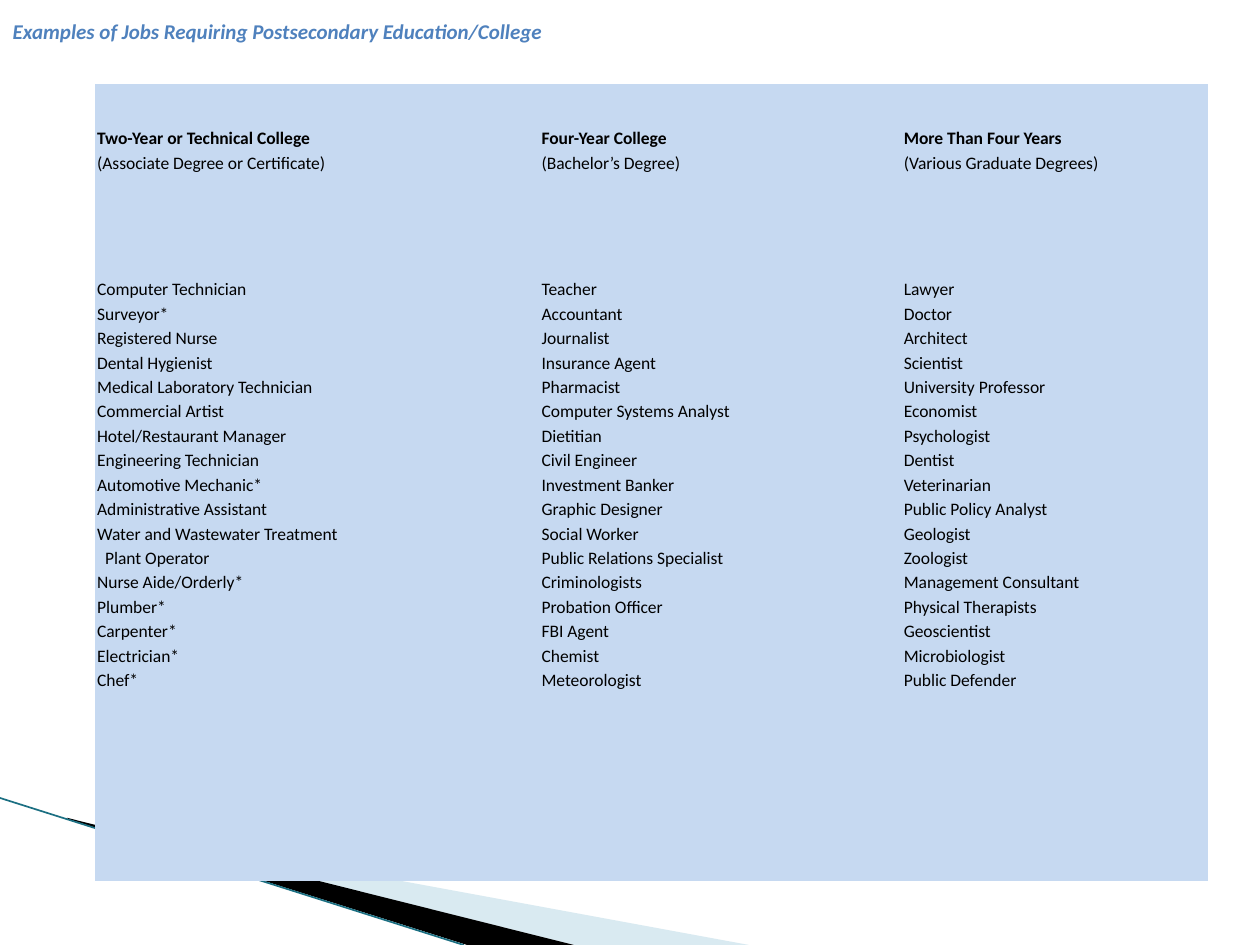
from dataclasses import dataclass

from lxml.etree import SubElement
from pptx import Presentation
from pptx.dml.color import RGBColor
from pptx.enum.shapes import MSO_CONNECTOR
from pptx.enum.text import MSO_ANCHOR, PP_ALIGN
from pptx.oxml.ns import qn
from pptx.util import Pt

PALE_TEAL = RGBColor(0xA0, 0xCB, 0xDC)
DARK_TEAL = RGBColor(0x1B, 0x6F, 0x82)
BLACK = RGBColor(0, 0, 0)
TITLE_BLUE = RGBColor(0x4F, 0x81, 0xBD)
CELL_BLUE = RGBColor(0xC6, 0xD9, 0xF1)
FONT = "Calibri"
PLAIN_TABLE = "{2D5ABB26-0587-4C30-8999-92F81FD0307C}"  # no style, no grid
ROW_HEIGHTS = (22.3, 64.1, 22.3, 347)
HEAD_ROW, JOBS_ROW = 1, 3


@dataclass
class Wedge:
    points: list[tuple[float, float]]
    color: RGBColor
    opacity: int = 100


@dataclass
class Column:
    width: float
    level: str
    degree: str
    jobs: list[str]


WEDGES = [
    Wedge([(39.6, 468.5), (428, 540), (328, 540), (39.6, 468)], PALE_TEAL, 40),
    Wedge([(38.2, 467.3), (328, 540), (267, 540), (38.9, 468)], BLACK),
]

CONTINUED = "Plant Operator"  # second line of the job above it
COLUMNS = [
    Column(254, "Two-Year or Technical College", "(Associate Degree or Certificate)", [
        "Computer Technician", "Surveyor*", "Registered Nurse", "Dental Hygienist",
        "Medical Laboratory Technician", "Commercial Artist",
        "Hotel/Restaurant Manager", "Engineering Technician",
        "Automotive Mechanic*", "Administrative Assistant",
        "Water and Wastewater Treatment", CONTINUED, "Nurse Aide/Orderly*",
        "Plumber*", "Carpenter*", "Electrician*", "Chef*"]),
    Column(207, "Four-Year College", "(Bachelor’s Degree)", [
        "Teacher", "Accountant", "Journalist", "Insurance Agent", "Pharmacist",
        "Computer Systems Analyst", "Dietitian", "Civil Engineer",
        "Investment Banker", "Graphic Designer", "Social Worker",
        "Public Relations Specialist", "Criminologists", "Probation Officer",
        "FBI Agent", "Chemist", "Meteorologist"]),
    Column(174.8, "More Than Four Years", "(Various Graduate Degrees)", [
        "Lawyer", "Doctor", "Architect", "Scientist", "University Professor",
        "Economist", "Psychologist", "Dentist", "Veterinarian",
        "Public Policy Analyst", "Geologist", "Zoologist",
        "Management Consultant", "Physical Therapists", "Geoscientist",
        "Microbiologist", "Public Defender"]),
]


def add_wedge(shapes, wedge: Wedge) -> None:
    start, *rest = [(Pt(x), Pt(y)) for x, y in wedge.points]
    builder = shapes.build_freeform(*start)
    builder.add_line_segments(rest)
    sp = builder.convert_to_shape()
    sp.shadow.inherit = False
    sp.fill.solid()
    sp.fill.fore_color.rgb = wedge.color
    sp.line.fill.background()
    if wedge.opacity < 100:
        color = sp._element.spPr.find(qn("a:solidFill"))[0]
        SubElement(color, qn("a:alpha")).set("val", str(wedge.opacity * 1000))


def add_edge(shapes) -> None:
    line = shapes.add_connector(MSO_CONNECTOR.STRAIGHT, Pt(0), Pt(456), Pt(265), Pt(540))
    line.line.color.rgb = DARK_TEAL
    line.line.width = Pt(0.95)
    SubElement(line._element.spPr, qn("a:effectLst"))


def fill_cell(cell, lines: list[str], bold_first: bool = False) -> None:
    cell.fill.solid()
    cell.fill.fore_color.rgb = CELL_BLUE
    cell.margin_left = cell.margin_right = Pt(1.2)
    cell.margin_top = cell.margin_bottom = Pt(1.2)
    tf = cell.text_frame
    tf.paragraphs[0].font.size = Pt(10)
    for i, text in enumerate(lines):
        p = tf.paragraphs[0] if i == 0 else tf.add_paragraph()
        p.line_spacing = 1.15
        if text == CONTINUED:
            p._p.get_or_add_pPr().set("marL", str(Pt(4.6)))
        r = p.add_run()
        r.text = text
        r.font.name = FONT
        r.font.size = Pt(10)
        r.font.bold = bold_first and i == 0
        r.font.color.rgb = BLACK


def add_jobs_table(shapes, columns: list[Column]) -> None:
    width = sum(c.width for c in columns)
    frame = shapes.add_table(len(ROW_HEIGHTS), len(columns),
                             Pt(54.3), Pt(48), Pt(width), Pt(sum(ROW_HEIGHTS)))
    table = frame.table
    table.first_row = table.horz_banding = False
    table._tbl.tblPr.find(qn("a:tableStyleId")).text = PLAIN_TABLE
    for row, height in zip(table.rows, ROW_HEIGHTS):
        row.height = Pt(height)
    for c, column in enumerate(columns):
        table.columns[c].width = Pt(column.width)
        content = {HEAD_ROW: [column.level, column.degree], JOBS_ROW: column.jobs}
        for r in range(len(ROW_HEIGHTS)):
            fill_cell(table.cell(r, c), content.get(r, []), bold_first=r == HEAD_ROW)


def set_title(title, text: str) -> None:
    title.left, title.top, title.width, title.height = Pt(0), Pt(0), Pt(720), Pt(36)
    tf = title.text_frame
    tf.word_wrap = True
    tf.vertical_anchor = MSO_ANCHOR.MIDDLE
    p = tf.paragraphs[0]
    p.alignment = PP_ALIGN.LEFT
    r = p.add_run()
    r.text = text
    r.font.name = FONT
    r.font.size = Pt(12)
    r.font.bold = r.font.italic = True
    r.font.color.rgb = TITLE_BLUE


def main() -> None:
    prs = Presentation()
    prs.slide_width, prs.slide_height = Pt(720), Pt(540)
    slide = prs.slides.add_slide(prs.slide_layouts[5])

    # Title
    set_title(slide.shapes.title,
              "Examples of Jobs Requiring Postsecondary Education/College")

    # Corner decoration
    for wedge in WEDGES:
        add_wedge(slide.shapes, wedge)
    add_edge(slide.shapes)

    # Jobs by level of education
    add_jobs_table(slide.shapes, COLUMNS)

    prs.save("out.pptx")


if __name__ == "__main__":
    main()
